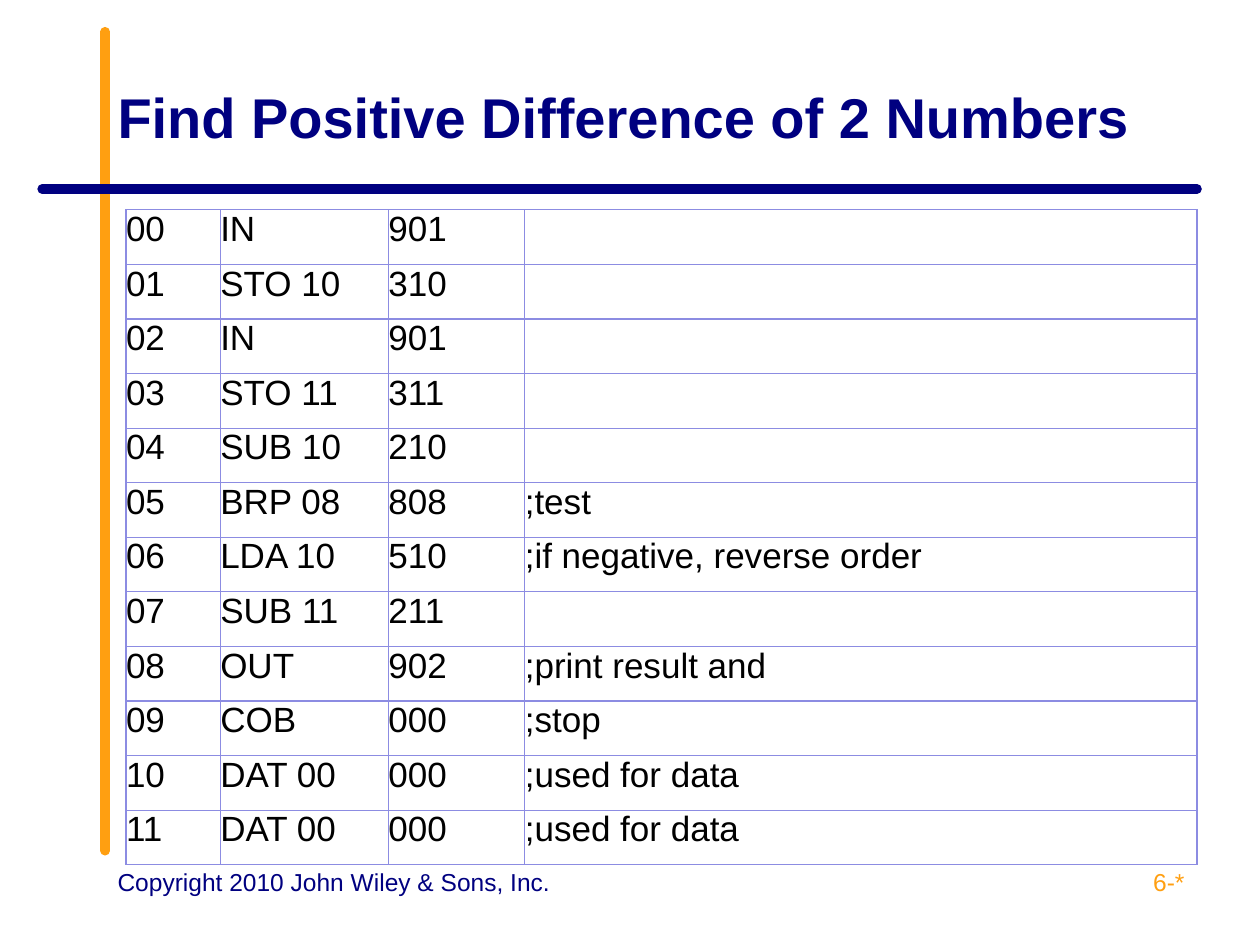
from dataclasses import dataclass

from lxml.etree import SubElement
from pptx import Presentation
from pptx.dml.color import RGBColor
from pptx.enum.shapes import MSO_CONNECTOR as Connector
from pptx.enum.text import MSO_ANCHOR as Anchor, PP_ALIGN as Align
from pptx.oxml.ns import qn
from pptx.util import Cm, Pt

TITLE = "Find Positive Difference of 2 Numbers"
COPYRIGHT = "Copyright 2010 John Wiley & Sons, Inc."
PAGE = "6-*"
PROGRAM = [
    ("IN", "901", ""),
    ("STO 10", "310", ""),
    ("IN", "901", ""),
    ("STO 11", "311", ""),
    ("SUB 10", "210", ""),
    ("BRP 08", "808", ";test"),
    ("LDA 10", "510", ";if negative, reverse order"),
    ("SUB 11", "211", ""),
    ("OUT", "902", ";print result and"),
    ("COB", "000", ";stop"),
    ("DAT 00", "000", ";used for data"),
    ("DAT 00", "000", ";used for data"),
]


@dataclass(frozen=True)
class Theme:
    font: str = "Arial"
    navy: str = "000080"
    orange: str = "FF9F11"
    black: str = "000000"
    border: str = "8C8CE2"
    title_size: float = 32
    table_size: float = 20
    footer_size: float = 14
    rule_width: float = 5.5
    border_width: float = 0.75


THEME = Theme()
LEFT, RIGHT = 2.12, 24.13
TABLE_LEFT, TABLE_TOP, ROW_HEIGHT = 2.54, 4.23, 1.1
COLUMN_WIDTHS = [1.9, 3.39, 2.75, 13.55]
FOOTER_TOP, FOOTER_HEIGHT = 17.35, 1.32
PAGE_WIDTH = 5.93


def add_run(paragraph, text, size, color, bold=False):
    run = paragraph.add_run()
    run.text = text
    run.font.name = THEME.font
    run.font.size = Pt(size)
    run.font.bold = bold
    run.font.color.rgb = RGBColor.from_string(color)


def add_text(slide, box, text, size, color, align=Align.LEFT, anchor=Anchor.TOP, bold=False):
    frame = slide.shapes.add_textbox(*map(Cm, box)).text_frame
    frame.word_wrap = True
    frame.vertical_anchor = anchor
    paragraph = frame.paragraphs[0]
    paragraph.alignment = align
    add_run(paragraph, text, size, color, bold)


def add_rule(slide, ends, color):
    rule = slide.shapes.add_connector(Connector.STRAIGHT, *map(Cm, ends))
    rule.line.color.rgb = RGBColor.from_string(color)
    rule.line.width = Pt(THEME.rule_width)
    rule.line._get_or_add_ln().set("cap", "rnd")
    SubElement(rule._element.spPr, qn("a:effectLst"))


def style_cell(cell):
    cell.margin_left = cell.margin_right = cell.margin_top = cell.margin_bottom = 0
    properties = cell._tc.get_or_add_tcPr()
    for side in ("a:lnL", "a:lnR", "a:lnT", "a:lnB"):
        line = SubElement(properties, qn(side), w=str(Pt(THEME.border_width)))
        fill = SubElement(line, qn("a:solidFill"))
        SubElement(fill, qn("a:srgbClr"), val=THEME.border)
    cell.fill.background()


def add_program(slide):
    table = slide.shapes.add_table(
        len(PROGRAM), len(COLUMN_WIDTHS), Cm(TABLE_LEFT), Cm(TABLE_TOP),
        Cm(sum(COLUMN_WIDTHS)), Cm(ROW_HEIGHT * len(PROGRAM)),
    ).table
    table.first_row = table.horz_banding = False
    for column, width in zip(table.columns, COLUMN_WIDTHS):
        column.width = Cm(width)
    for address, (row, instruction) in enumerate(zip(table.rows, PROGRAM)):
        row.height = Cm(ROW_HEIGHT)
        for cell, text in zip(row.cells, (f"{address:02}", *instruction)):
            style_cell(cell)
            if text:
                add_run(cell.text_frame.paragraphs[0], text, THEME.table_size, THEME.black)


def main():
    presentation = Presentation()
    presentation.slide_width, presentation.slide_height = Cm(25.4), Cm(19.05)
    slide = presentation.slides.add_slide(presentation.slide_layouts[6])
    add_rule(slide, (LEFT, 17.15, LEFT, 0.64), THEME.orange)
    add_rule(slide, (RIGHT, 3.81, 0.85, 3.81), THEME.navy)
    add_text(slide, (LEFT, FOOTER_TOP, 9.31, FOOTER_HEIGHT), COPYRIGHT,
             THEME.footer_size, THEME.navy)
    add_text(slide, (RIGHT - PAGE_WIDTH, FOOTER_TOP, PAGE_WIDTH, FOOTER_HEIGHT), PAGE,
             THEME.footer_size, THEME.orange, align=Align.RIGHT)
    add_text(slide, (LEFT, 0.76, RIGHT - LEFT, 3.18), TITLE,
             THEME.title_size, THEME.navy, anchor=Anchor.MIDDLE, bold=True)
    add_program(slide)
    presentation.save("out.pptx")


if __name__ == "__main__":
    main()
